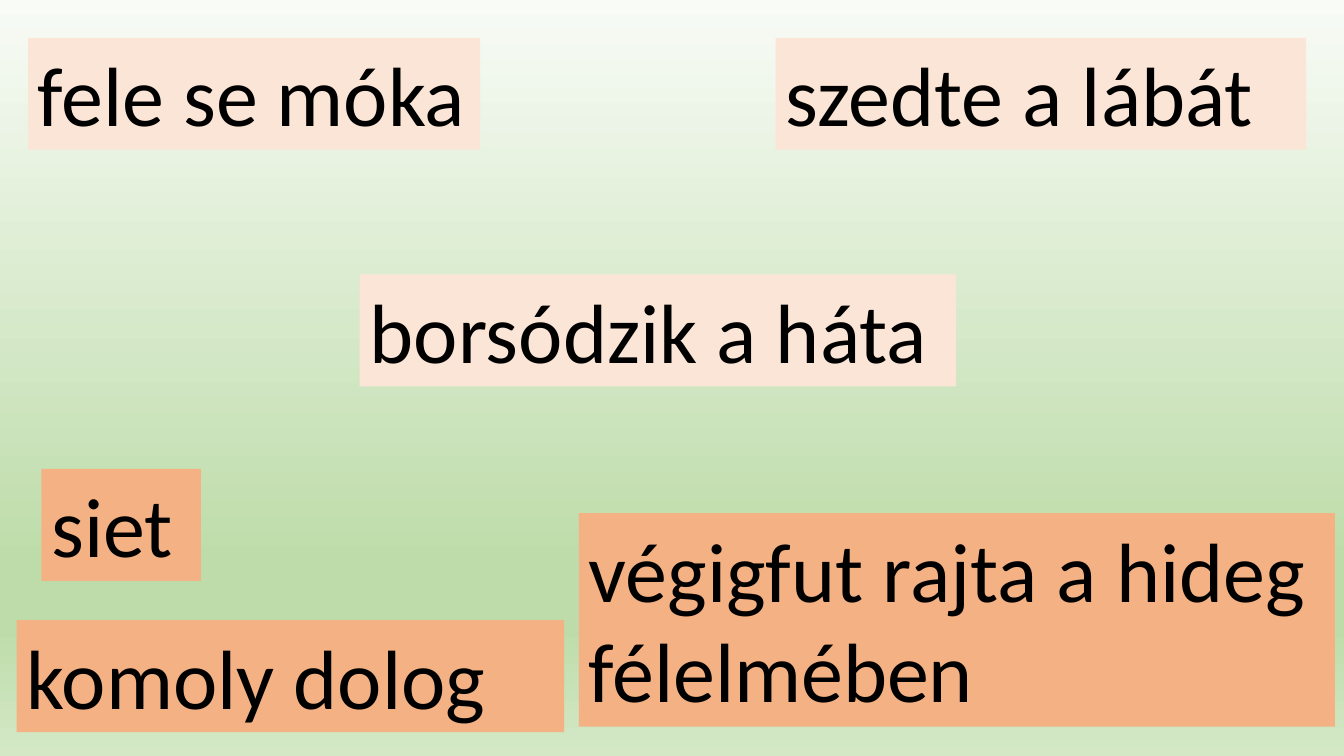
from lxml import etree
from pptx import Presentation
from pptx.dml.color import RGBColor
from pptx.enum.shapes import MSO_SHAPE
from pptx.enum.text import MSO_ANCHOR, MSO_AUTO_SIZE, PP_ALIGN
from pptx.oxml.ns import qn
from pptx.util import Pt

RECTANGLE = MSO_SHAPE.RECTANGLE
LEFT = PP_ALIGN.LEFT
TOP = MSO_ANCHOR.TOP
GROW = MSO_AUTO_SIZE.SHAPE_TO_FIT_TEXT

IDIOM = "FBE5D6"
MEANING = "F4B183"
LINE_HEIGHT = 80
BACKGROUND_STOPS = [(0, "F8FBF6"), (74, "BEDCAA"), (83, "BEDCAA"), (100, "D4E8C6")]

CARDS = [
    ("fele se móka", IDIOM, 20, 27, 323, LINE_HEIGHT),
    ("szedte a lábát", IDIOM, 554, 27, 379, LINE_HEIGHT),
    ("borsódzik a háta", IDIOM, 257, 196, 426, LINE_HEIGHT),
    ("komoly dolog", MEANING, 12, 443, 391, LINE_HEIGHT),
    ("végigfut rajta a hideg félelmében", MEANING, 413.5, 366.5, 540, 152.5),
    ("siet", MEANING, 29.5, 335, 114, LINE_HEIGHT),
]


def colour(value):
    return RGBColor.from_string(value)


class Painter:
    font = "Calibri"
    size = 60
    ink = "000000"

    def __init__(self, slide):
        self.slide = slide

    def background(self, stops):
        fill = self.slide.background.fill
        fill.gradient()
        fill.gradient_angle = 270
        stop_list = next(self.slide.element.iter(qn("a:gsLst")))
        for stop in list(stop_list):
            stop_list.remove(stop)
        for percent, value in stops:
            stop = etree.SubElement(stop_list, qn("a:gs"), pos=str(percent * 1000))
            etree.SubElement(stop, qn("a:srgbClr"), val=value)

    def card(self, text, fill, left, top, width, height):
        box = self.slide.shapes.add_shape(
            RECTANGLE, Pt(left), Pt(top), Pt(width), Pt(height))
        box.shadow.inherit = False
        box.fill.solid()
        box.fill.fore_color.rgb = colour(fill)
        box.line.fill.background()
        frame = box.text_frame
        frame.word_wrap = True
        frame.auto_size = GROW
        frame.vertical_anchor = TOP
        para = frame.paragraphs[0]
        para.alignment = LEFT
        span = para.add_run()
        span.text = text
        span.font.name = self.font
        span.font.size = Pt(self.size)
        span.font.color.rgb = colour(self.ink)


def main():
    deck = Presentation()
    deck.slide_width = Pt(960)
    deck.slide_height = Pt(540)
    painter = Painter(deck.slides.add_slide(deck.slide_layouts[6]))
    painter.background(BACKGROUND_STOPS)
    for card in CARDS:
        painter.card(*card)
    deck.save("out.pptx")


if __name__ == "__main__":
    main()
